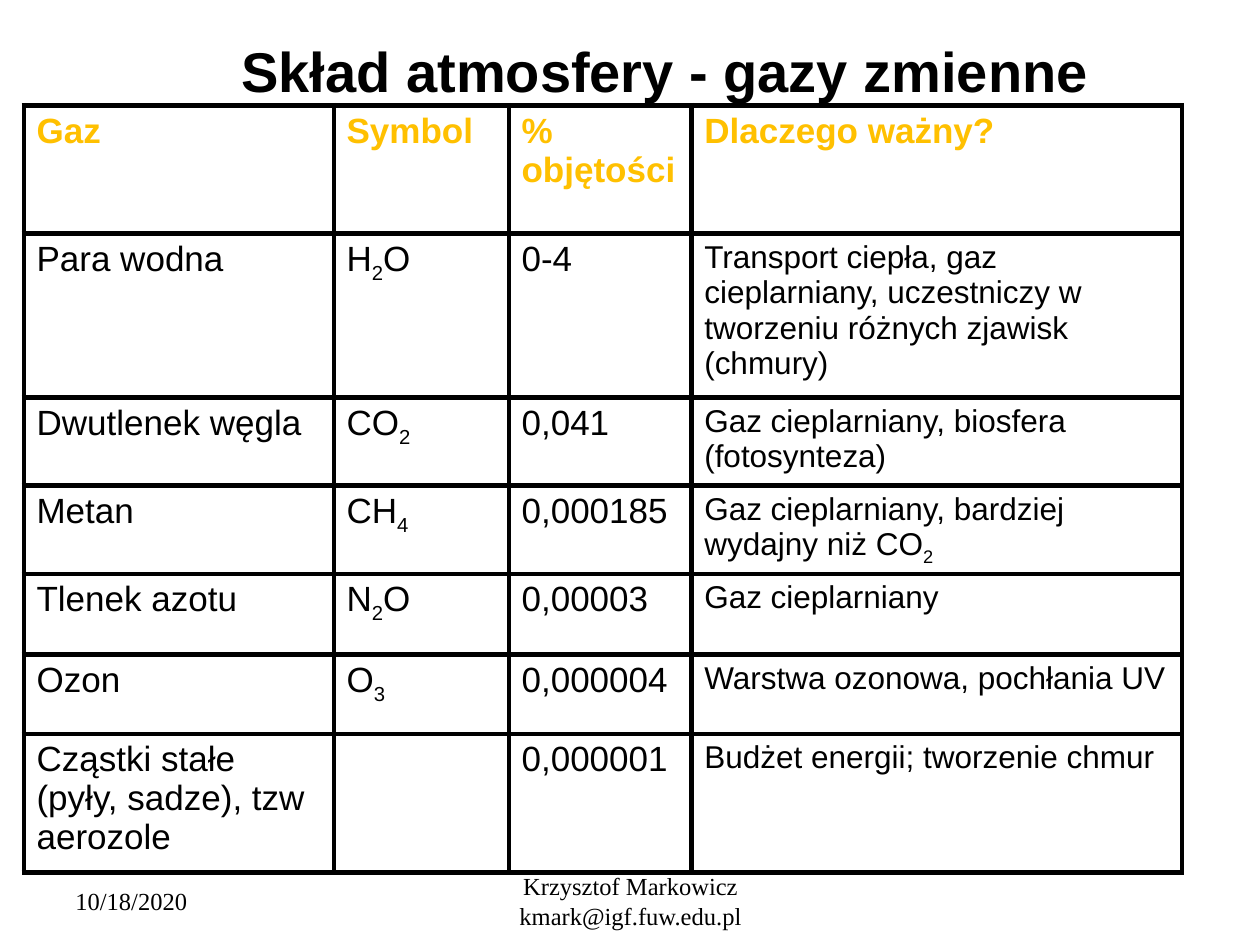
from lxml import etree
from pptx import Presentation
from pptx.dml.color import RGBColor
from pptx.enum.text import MSO_ANCHOR, MSO_AUTO_SIZE, PP_ALIGN
from pptx.oxml.ns import qn
from pptx.util import Inches, Pt

LEFT, MID = PP_ALIGN.LEFT, PP_ALIGN.CENTER
CENTER = MSO_ANCHOR.MIDDLE
FIXED = MSO_AUTO_SIZE.NONE
BLACK = RGBColor(0, 0, 0)
GOLD = RGBColor(0xFF, 0xC0, 0)
SANS, SERIF = "Arial", "Times New Roman"
COLS, ROWS = 100, 75

HEAD = ["Gaz", "Symbol", "% objętości", "Dlaczego ważny?"]
GASES = [
    ["Para wodna", "H_2O", "0-4",
     "Transport ciepła, gaz cieplarniany, uczestniczy w tworzeniu różnych zjawisk (chmury)"],
    ["Dwutlenek węgla", "CO_2", "0,041", "Gaz cieplarniany, biosfera (fotosynteza)"],
    ["Metan", "CH_4", "0,000185", "Gaz cieplarniany, bardziej wydajny niż CO_2"],
    ["Tlenek azotu", "N_2O", "0,00003", "Gaz cieplarniany"],
    ["Ozon", "O_3", "0,000004", "Warstwa ozonowa, pochłania UV"],
    ["Cząstki stałe (pyły, sadze), tzw aerozole", "", "0,000001",
     "Budżet energii; tworzenie chmur"],
]
WIDTHS = [24.6, 13.9, 14.5, 38.9]
HEIGHTS = [10.2, 13, 7, 7, 6.4, 6.3, 11]


class Page:
    def __init__(self, deck):
        self.slide = deck.slides.add_slide(deck.slide_layouts[5])
        self.dx = deck.slide_width / COLS
        self.dy = deck.slide_height / ROWS

    def area(self, x, y, w, h):
        return [int(n * d) for n, d in zip((x, y, w, h), (self.dx, self.dy) * 2)]

    def style(self, para, size, face, color=BLACK, bold=False, align=LEFT):
        para.alignment = align
        font = para.font
        font.size, font.name, font.bold = Pt(size), face, bold
        font.color.rgb = color

    def title(self, text, *box):
        shape = self.slide.shapes.title
        shape.left, shape.top, shape.width, shape.height = self.area(*box)
        frame = shape.text_frame
        frame.text = text
        frame.auto_size, frame.vertical_anchor = FIXED, CENTER
        self.style(frame.paragraphs[0], 32, SANS, bold=True, align=MID)

    def note(self, text, align, *box):
        frame = self.slide.shapes.add_textbox(*self.area(*box)).text_frame
        frame.text = text
        frame.word_wrap, frame.vertical_anchor = True, CENTER
        self.style(frame.paragraphs[0], 14, SERIF, align=align)

    def formula(self, para, text):
        start, *parts = text.split("_")
        para.add_run().text = start
        for part in parts:
            low = para.add_run()
            low.text = part[0]
            low.font._element.set("baseline", "-25000")
            if part[1:]:
                para.add_run().text = part[1:]

    def border(self, cell, width=3):
        props = cell._tc.get_or_add_tcPr()
        for side in ("lnL", "lnR", "lnT", "lnB"):
            line = etree.SubElement(props, qn(f"a:{side}"), w=str(Pt(width)))
            fill = etree.SubElement(line, qn("a:solidFill"))
            etree.SubElement(fill, qn("a:srgbClr"), val=str(BLACK))

    def table(self, data, x, y):
        box = self.area(x, y, sum(WIDTHS), sum(HEIGHTS))
        grid = self.slide.shapes.add_table(len(data), len(HEAD), *box).table
        grid.first_row = grid.horz_banding = False
        for col, width in zip(grid.columns, WIDTHS):
            col.width = int(width * self.dx)
        for row, height in zip(grid.rows, HEIGHTS):
            row.height = int(height * self.dy)
        for r, line in enumerate(data):
            for c, text in enumerate(line):
                cell = grid.cell(r, c)
                self.border(cell)
                cell.fill.background()
                cell.margin_left = cell.margin_right = Inches(0.1)
                cell.margin_top = Inches(0.05)
                tight = c == 3 and "_" in text
                cell.margin_bottom = Inches(0 if tight else 0.05)
                para = cell.text_frame.paragraphs[0]
                size = 18 if r and c == 3 else 20
                self.style(para, size, SANS, BLACK if r else GOLD, r == 0)
                if text:
                    self.formula(para, text)


def main():
    deck = Presentation()
    deck.slide_width, deck.slide_height = Inches(10), Inches(7.5)
    page = Page(deck)
    page.title("Skład atmosfery - gazy zmienne", 7.5, 2.1, 90.6, 7)
    page.table([HEAD] + GASES, 1.9, 8.35)
    page.note("10/18/2020", LEFT, 5, 69.5, 23.3, 4)
    page.note("Krzysztof Markowicz kmark@igf.fuw.edu.pl", MID, 34.2, 69.5, 31.7, 4)
    deck.save("out.pptx")


if __name__ == "__main__":
    main()
